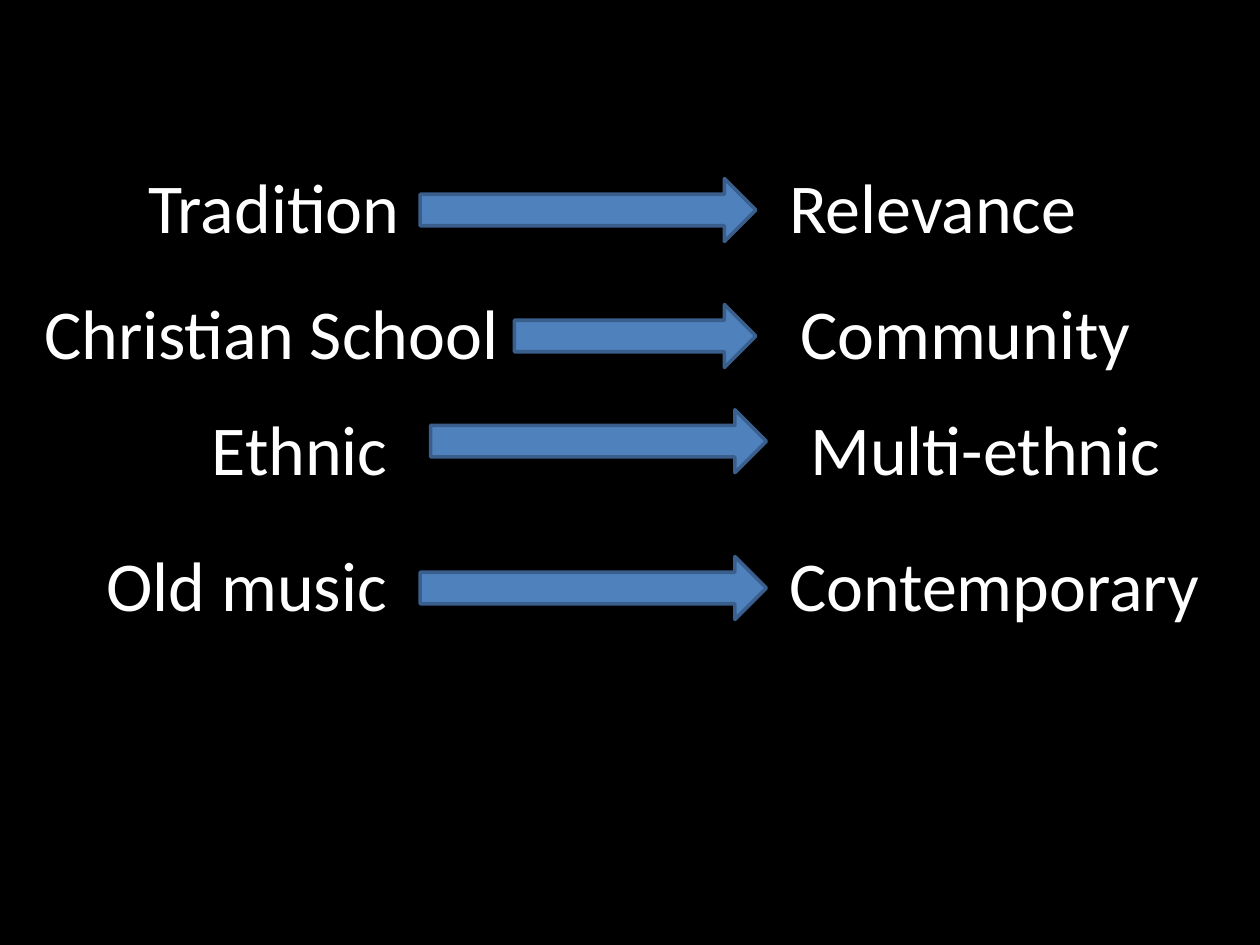
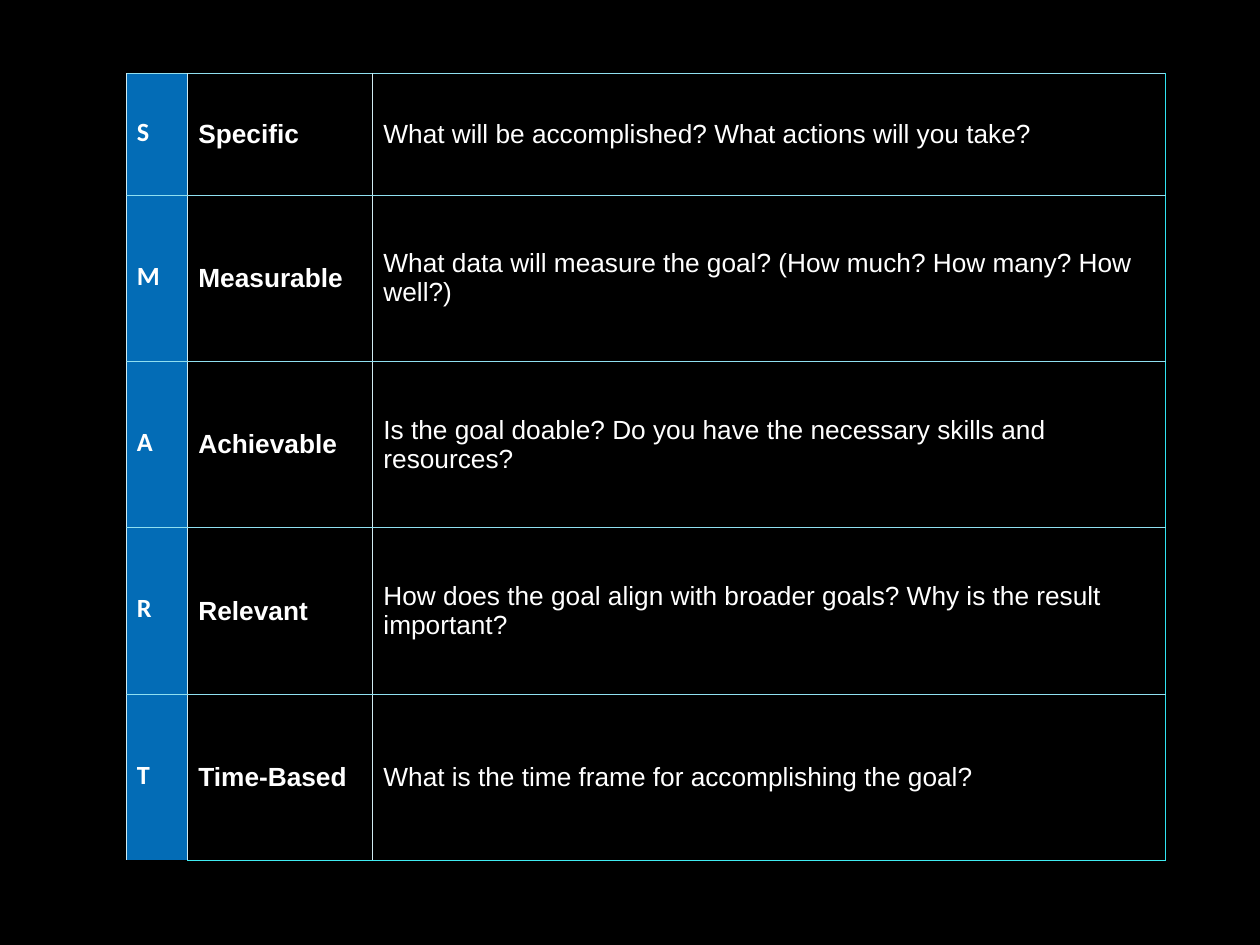
from lxml.etree import SubElement
from pptx import Presentation
from pptx.dml.color import RGBColor
from pptx.enum.shapes import MSO_SHAPE as SHAPE
from pptx.enum.text import MSO_ANCHOR as ANCHOR, MSO_AUTO_SIZE as AUTO
from pptx.oxml.ns import qn
from pptx.util import Cm, Pt

BLACK = RGBColor(0x00, 0x00, 0x00)
WHITE = RGBColor(0xFF, 0xFF, 0xFF)
ARROW_FILL = RGBColor(0x4F, 0x81, 0xBD)
ARROW_LINE = RGBColor(0x3A, 0x5F, 0x8C)
LETTER_FILL = RGBColor(0x03, 0x6C, 0xB6)
EDGE_SIDE = RGBColor(0xD0, 0xEB, 0xF1)
EDGE_ROW = RGBColor(0x90, 0xE0, 0xF1)
EDGE_RIGHT = RGBColor(0x30, 0xE3, 0xF1)
EDGE_BOTTOM = RGBColor(0x40, 0xEB, 0xF1)

LABEL_HEIGHT = 1.96
ARROW_HEIGHT = 1.27

# Row top, then (text, left, width), arrow (left, width, drop), (text, left, width), all in cm
SHIFTS = [
    (0, ("Tradition", 2.74, 5.97), (8.47, 6.77, 0.42), ("Relevance", 15.66, 6.35)),
    (2.54, ("Christian School", 0.64, 9.78), (10.37, 4.87, 0.42), ("Community", 15.88, 7.24)),
    (4.87, ("Ethnic", 4.02, 4.09), (8.68, 6.77, 0.21), ("Multi-ethnic", 16.09, 7.65)),
    (7.62, ("Old music", 1.9, 6.22), (8.47, 6.98, 0.42), ("Contemporary", 15.66, 8.86)),
]

SMART = [
    ("Specific", "What will be accomplished? What actions will you take?"),
    ("Measurable", "What data will measure the goal? (How much? How many? How well?)"),
    ("Achievable", "Is the goal doable? Do you have the necessary skills and resources?"),
    ("Relevant", "How does the goal align with broader goals? Why is the result important?"),
    ("Time-Based", "What is the time frame for accomplishing the goal?"),
]


def write(tf, text, size, font="Calibri", bold=False, color=WHITE):
    r = tf.paragraphs[0].add_run()
    r.text = text
    r.font.name, r.font.size, r.font.bold = font, Pt(size), bold
    r.font.color.rgb = color


def add_label(s, text, left, top, width):
    tf = s.shapes.add_textbox(Cm(left), Cm(top), Cm(width), Cm(LABEL_HEIGHT)).text_frame
    tf.word_wrap = False
    tf.auto_size = AUTO.SHAPE_TO_FIT_TEXT
    write(tf, text, 40)


def add_arrow(s, left, top, width):
    sp = s.shapes.add_shape(SHAPE.RIGHT_ARROW, Cm(left), Cm(top), Cm(width), Cm(ARROW_HEIGHT))
    sp.shadow.inherit = False
    sp.fill.solid()
    sp.fill.fore_color.rgb = ARROW_FILL
    sp.line.color.rgb = ARROW_LINE
    sp.line.width = Pt(2)


def add_shift(s, top, before, arrow, after):
    """One row: old value, arrow, new value."""
    arrow_left, arrow_width, drop = arrow
    for text, left, width in (before, after):
        add_label(s, text, left, top, width)
    add_arrow(s, arrow_left, top + drop, arrow_width)


def set_borders(cell, **edges):
    """Draw edges L, R, T, B; a colour of None leaves that edge open."""
    tc_pr = cell._tc.get_or_add_tcPr()
    for i, side in enumerate("LRTB"):
        ln = SubElement(tc_pr, qn("a:ln" + side), w=str(int(Pt(0.38))))
        if edges[side] is None:
            SubElement(ln, qn("a:noFill"))
        else:
            fill = SubElement(ln, qn("a:solidFill"))
            SubElement(fill, qn("a:srgbClr"), val=str(edges[side]))
        tc_pr.insert(i, ln)


def add_smart_table(s, left, top, width, height):
    col_widths = [1.24, 3.73, width - 4.97]
    first_height = 2.45
    row_height = (height - first_height) / (len(SMART) - 1)
    table = s.shapes.add_table(len(SMART), 3, Cm(left), Cm(top), Cm(width), Cm(height)).table
    table.first_row = table.horz_banding = False
    for col, col_width in zip(table.columns, col_widths):
        col.width = Cm(col_width)

    for i, (term, question) in enumerate(SMART):
        table.rows[i].height = Cm(row_height if i else first_height)
        last = i == len(SMART) - 1
        for j, text in enumerate((term[0], term, question)):
            cell = table.cell(i, j)
            cell.vertical_anchor = ANCHOR.MIDDLE
            cell.margin_left = cell.margin_right = cell.margin_top = Cm(0.22)
            cell.margin_bottom = Cm(0.22 if j else 0.3)
            if j:
                cell.fill.background()
            else:
                cell.fill.solid()
                cell.fill.fore_color.rgb = LETTER_FILL
            write(cell.text_frame, text, 15, font="Arial" if j else "Calibri", bold=j < 2)
            bottom = EDGE_ROW
            if last:
                bottom = EDGE_BOTTOM if j else None
            set_borders(cell, L=EDGE_SIDE, R=EDGE_RIGHT if j == 2 else EDGE_SIDE,
                        T=EDGE_ROW, B=bottom)


def build_shifts(prs, top):
    s = prs.slides.add_slide(prs.slide_layouts[6])
    for row_top, *parts in SHIFTS:
        add_shift(s, top + row_top, *parts)


def build_smart(prs):
    s = prs.slides.add_slide(prs.slide_layouts[6])
    add_smart_table(s, left=2.54, top=1.48, width=20.95, height=15.87)


def main():
    prs = Presentation()
    prs.slide_width, prs.slide_height = Cm(25.4), Cm(19.05)
    # Shared black background
    fill = prs.slide_master.background.fill
    fill.solid()
    fill.fore_color.rgb = BLACK
    build_shifts(prs, top=3.18)
    build_smart(prs)
    prs.save("out.pptx")


if __name__ == "__main__":
    main()
